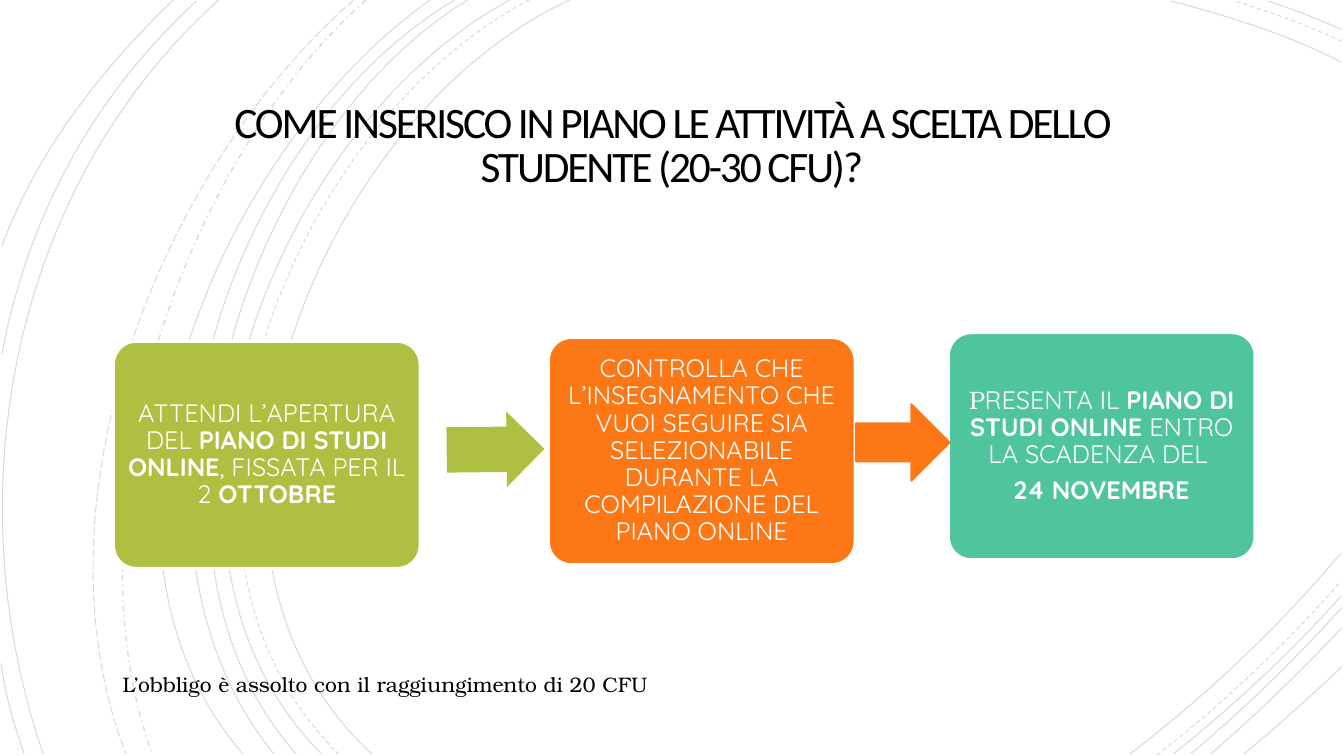
from pptx import Presentation
from pptx.util import Pt
from pptx.dml.color import RGBColor
from pptx.enum import dml, shapes, text as txt
from pptx.oxml.ns import qn
from lxml import etree

COLORS = {"ink": "000000", "white": "FFFFFF", "green": "AFBF41",
          "orange": "FC7715", "teal": "50C49F"}
BODY, SERIF, HEAD = "Quicksand", "TeX Gyre Bonum", "Calibri"
DASH = dml.MSO_LINE
SLIDE_W, SLIDE_H = 960, 540
CARD_W, CARD_H = 218.9, 162
BOTTOM, RIGHT = 538.6, 958.3

# Each arc: start, two control points, end (x, y in points)
SOLID_ARCS = [
    (406.8, 0, 226.8, 82.8, 103, 388.8, 265.7, BOTTOM),
    (364.3, 0, 194.4, 91.4, 79.2, 386.6, 229.7, BOTTOM),
    (334.1, 0, 175.7, 95.8, 79.2, 389.5, 211.7, BOTTOM),
    (324.7, 0, 158.4, 99.4, 69.8, 383.8, 195.8, BOTTOM),
    (307.4, 0, 156.2, 105.8, 38.2, 380.9, 173.5, BOTTOM),
    (156.2, 0, 7.9, 133.2, -33.1, 352.8, 31, BOTTOM),
    (140.4, 0.7, 66.2, 69.1, 20.2, 154.1, 1.4, 252.7),
    (123.8, 0, 72, 49.7, 26.6, 108, 1.4, 175.7),
    (0.7, 473.8, 3.6, 496.1, 10.1, 517.7, 17.3, BOTTOM),
    (RIGHT, 44.6, 920.2, 24.5, 877, 11.5, 836.6, 0.7),
    (RIGHT, 20.9, 941, 13.7, 923.8, 6.5, 905.8, 0.7),
    (807.1, BOTTOM, 861.8, 496.8, 913.7, 447.8, RIGHT, 394.6),
    (838.1, BOTTOM, 880.6, 504.7, 921.6, 466.6, RIGHT, 425.5),
    (850.3, BOTTOM, 888.5, 506.9, 924.5, 471.6, RIGHT, 434.2),
    (864.7, BOTTOM, 897.1, 510.5, 928.8, 480.2, RIGHT, 448.6),
    (888.5, BOTTOM, 912.2, 519.1, 935.3, 498.2, RIGHT, 476.6),
]
DASHED_ARCS = [
    (378, 0, 205.2, 90, 88.6, 386.6, 241.9, BOTTOM),
    (RIGHT, 29.5, 933.8, 18, 907.2, 8.6, 882, 0.7),
    (826.6, 539.3, 873.4, 502.6, 918, 460.8, 957.6, 415.4),
]
DASH_DOT_ARC = (261.4, 0, 126.7, 119.5, 46.8, 366.5, 108.7, BOTTOM)
LONG_DASH_ARC = (252.7, 0, 113, 121.7, 20.9, 359.3, 90, BOTTOM)

# Each card: left, top, colour, paragraphs of (text, bold, font) runs
CARDS = [
    (391.8, 241.2, "orange", [[
        ("CONTROLLA CHE L’INSEGNAMENTO CHE VUOI SEGUIRE SIA SELEZIONABILE "
         "DURANTE LA COMPILAZIONE DEL PIANO ONLINE", False, BODY)]]),
    (81.1, 243.9, "green", [[
        ("ATTENDI L’APERTURA DEL ", False, BODY),
        ("PIANO DI STUDI ONLINE", True, BODY),
        (", FISSATA PER IL 2", False, BODY),
        (" OTTOBRE", True, BODY)]]),
    (677.5, 237.7, "teal", [
        [("P", False, SERIF),
         ("RESENTA IL ", False, BODY),
         ("PIANO DI STUDI ONLINE ", True, BODY),
         ("ENTRO LA SCADENZA DEL ", False, BODY)],
        [("24 NOVEMBRE", True, BODY)]]),
]


def rgb(name):
    return RGBColor.from_string(COLORS[name])


def add_run(p, words, size, font, color, bold=False):
    r = p.add_run()
    r.text = words
    r.font.size = Pt(size)
    r.font.name = font
    r.font.bold = bold
    r.font.color.rgb = rgb(color)
    return r


def set_frame(tf, insets, anchor):
    tf.word_wrap = True
    tf.vertical_anchor = anchor
    tf.margin_left, tf.margin_top, tf.margin_right, tf.margin_bottom = (
        Pt(i) for i in insets)


def add_shape(s, kind, box, color):
    sp = s.shapes.add_shape(kind, *(Pt(v) for v in box))
    sp.shadow.inherit = False
    sp.fill.solid()
    sp.fill.fore_color.rgb = rgb(color)
    sp.line.fill.background()
    return sp


def add_arc(s, arc, dash=DASH.SOLID, width=0.75):
    start, *rest = [(Pt(x), Pt(y)) for x, y in zip(arc[::2], arc[1::2])]
    builder = s.shapes.build_freeform(*start)
    builder.add_line_segments(rest, close=False)
    sp = builder.convert_to_shape()
    # Turn the three straight segments into one cubic curve
    outline = sp._element.find(".//" + qn("a:path"))
    curve = etree.SubElement(outline, qn("a:cubicBezTo"))
    for segment in outline.findall(qn("a:lnTo")):
        curve.append(segment[0])
        outline.remove(segment)
    sp.shadow.inherit = False
    sp.fill.background()
    sp.line.color.rgb = rgb("ink")
    sp.line.width = Pt(width)
    sp.line.dash_style = dash
    ink = sp.line._ln.find(".//" + qn("a:srgbClr"))
    etree.SubElement(ink, qn("a:alpha")).set("val", "15000")


def add_backdrop(s):
    add_shape(s, shapes.MSO_SHAPE.RECTANGLE, (0, 0, SLIDE_W, SLIDE_H), "white")
    for arc in SOLID_ARCS:
        add_arc(s, arc)
    for arc in DASHED_ARCS:
        add_arc(s, arc, DASH.DASH)
    add_arc(s, DASH_DOT_ARC, DASH.DASH_DOT, 1)
    add_arc(s, LONG_DASH_ARC, DASH.LONG_DASH)


def add_title(s, x, y, w, h):
    tf = s.shapes.add_textbox(Pt(x), Pt(y), Pt(w), Pt(h)).text_frame
    set_frame(tf, (8.64, 8.64, 8.64, 7.2), txt.MSO_ANCHOR.MIDDLE)
    p = tf.paragraphs[0]
    p.alignment = txt.PP_ALIGN.CENTER
    p.line_spacing = 0.85
    r = add_run(p, "COME INSERISCO IN PIANO LE ATTIVITÀ A SCELTA DELLO "
                   "STUDENTE (20-30 CFU)?", 31, HEAD, "ink")
    r.font._element.set("spc", "-150")


def add_card(s, x, y, color, paragraphs):
    sp = add_shape(s, shapes.MSO_SHAPE.ROUNDED_RECTANGLE,
                   (x, y, CARD_W, CARD_H), color)
    sp.adjustments[0] = 0.1
    sp.line.color.rgb = rgb("white")
    sp.line.width = Pt(2)
    tf = sp.text_frame
    set_frame(tf, (5, 5, 5, 5), txt.MSO_ANCHOR.MIDDLE)
    for i, runs in enumerate(paragraphs):
        p = tf.add_paragraph() if i else tf.paragraphs[0]
        p.alignment = txt.PP_ALIGN.CENTER
        p.line_spacing = 0.9
        p.space_after = Pt(6.3)
        for words, bold, font in runs:
            add_run(p, words, 18, font, "white", bold)


def add_steps(s):
    for card in CARDS:
        add_card(s, *card)
    # Arrows between the cards
    arrow = shapes.MSO_SHAPE.RIGHT_ARROW
    first = add_shape(s, arrow, (319.1, 294, 69.8, 54), "green")
    first.adjustments[0] = 0.6
    first.rotation = 359.4
    second = add_shape(s, arrow, (611.3, 288.7, 67, 54.7), "orange")
    second.line.color.rgb = rgb("orange")
    second.line.width = Pt(1.25)


def add_footnote(s, x, y, w, h):
    tf = s.shapes.add_textbox(Pt(x), Pt(y), Pt(w), Pt(h)).text_frame
    set_frame(tf, (7.2, 3.6, 7.2, 3.6), txt.MSO_ANCHOR.TOP)
    add_run(tf.paragraphs[0],
            "L’obbligo è assolto con il raggiungimento di 20 CFU",
            15, SERIF, "ink")


def main():
    prs = Presentation()
    prs.slide_width, prs.slide_height = Pt(SLIDE_W), Pt(SLIDE_H)
    s = prs.slides.add_slide(prs.slide_layouts[6])
    add_backdrop(s)
    add_title(s, 138.2, 62.8, 683.3, 82.8)
    add_steps(s)
    add_footnote(s, 80.6, 476.3, 495.4, 25.2)
    prs.save("out.pptx")


if __name__ == "__main__":
    main()
